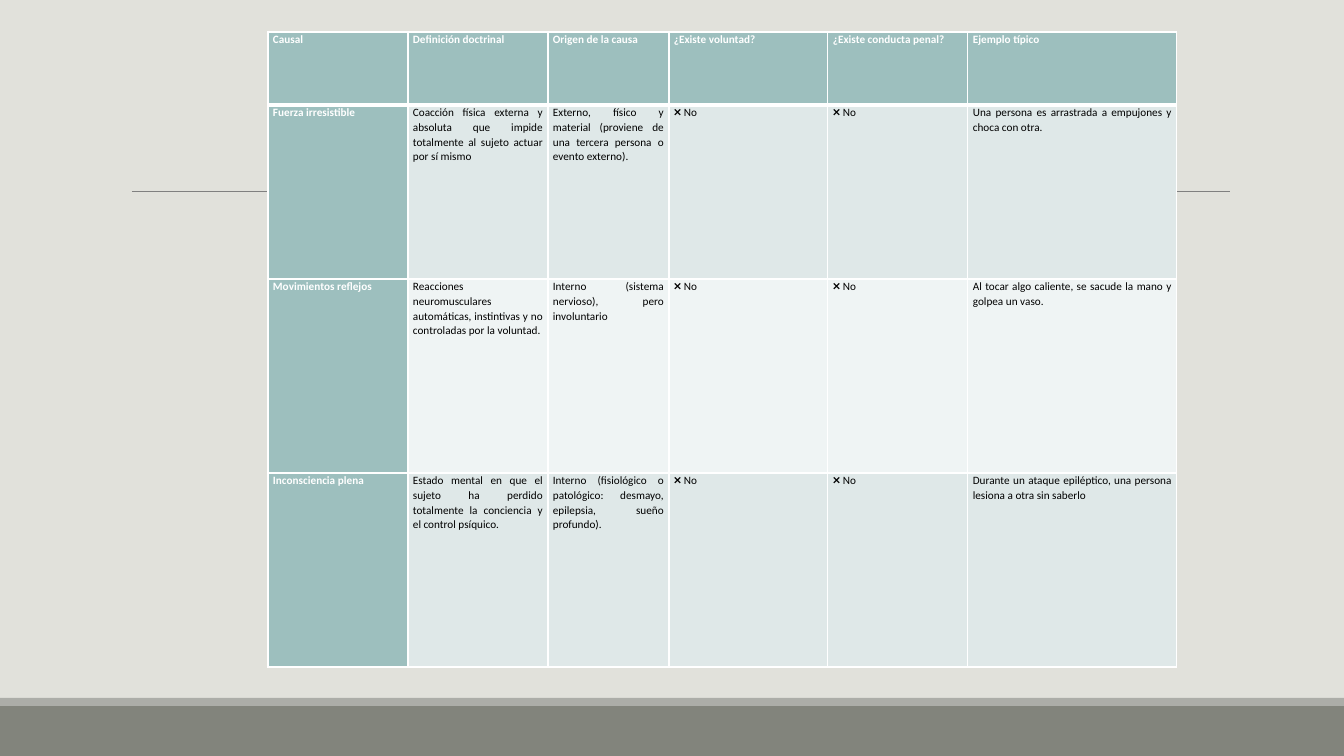
from pptx import Presentation
from pptx.dml.color import RGBColor as RGB
from pptx.enum.shapes import MSO_CONNECTOR as LINK, MSO_SHAPE as SHAPE
from pptx.enum.text import PP_ALIGN as ALIGN
from pptx.oxml.ns import qn
from pptx.util import Pt
from lxml.etree import SubElement as Sub, Element

PX = 9144000 / 1008
WIDE, HIGH = 1344, 756
COLORS = {
    "page": "E1E1DB", "band": "82847C", "strip": "ACADA8", "rule": "808080",
    "head": "9DBFBE", "odd": "DFE8E8", "even": "EFF4F4",
    "white": "FFFFFF", "black": "000000",
}
COLS = [140, 140, 121, 159, 140, 209]
ROWS = [73, 174, 194, 194]
NO = "❌ No"
CAUSES = [
    ["Causal", "Definición doctrinal", "Origen de la causa", "¿Existe voluntad?",
     "¿Existe conducta penal?", "Ejemplo típico"],
    ["Fuerza irresistible",
     "Coacción física externa y absoluta que impide totalmente al sujeto actuar por sí mismo",
     "Externo, físico y material (proviene de una tercera persona o evento externo).",
     NO, NO, "Una persona es arrastrada a empujones y choca con otra."],
    ["Movimientos reflejos",
     "Reacciones neuromusculares automáticas, instintivas y no controladas por la voluntad.",
     "Interno (sistema nervioso), pero involuntario",
     NO, NO, "Al tocar algo caliente, se sacude la mano y golpea un vaso."],
    ["Inconsciencia plena",
     "Estado mental en que el sujeto ha perdido totalmente la conciencia y el control psíquico.",
     "Interno (fisiológico o patológico: desmayo, epilepsia, sueño profundo).",
     NO, NO, "Durante un ataque epiléptico, una persona lesiona a otra sin saberlo"],
]


def px(n):
    return round(n * PX)


def color(name):
    return RGB.from_string(COLORS[name])


def add_bar(slide, x, y, w, h, fill):
    bar = slide.shapes.add_shape(SHAPE.RECTANGLE, px(x), px(y), px(w), px(h))
    bar.shadow.inherit = False
    bar.fill.solid()
    bar.fill.fore_color.rgb = color(fill)
    bar.line.fill.background()


def add_rule(slide, x, y, w):
    rule = slide.shapes.add_connector(LINK.STRAIGHT, px(x), px(y), px(x + w), px(y))
    rule.line.color.rgb = color("rule")
    rule.line.width = Pt(0.5)
    Sub(rule._element.spPr, qn("a:effectLst"))


def add_frame(slide):
    """Page colour, footer bands and title rule."""
    back = slide.background.fill
    back.solid()
    back.fore_color.rgb = color("page")
    add_bar(slide, 0, 706, WIDE, HIGH - 706, "band")
    add_bar(slide, 0, 698, WIDE, 8, "strip")
    add_rule(slide, 132, 191, 1098)


def set_edges(cell, widths):
    """Draw white borders; widths holds points for left, right, top, bottom."""
    props = cell._tc.get_or_add_tcPr()
    for i, (side, width) in enumerate(zip("LRTB", widths)):
        edge = Element(qn(f"a:ln{side}"), w=str(Pt(width)))
        fill = Sub(edge, qn("a:solidFill"))
        Sub(fill, qn("a:srgbClr"), val=COLORS["white"])
        props.insert(i, edge)


def fill_cell(cell, text, row, col):
    title = row == 0 or col == 0
    cell.margin_left = cell.margin_right = px(5)
    cell.margin_top = cell.margin_bottom = 0
    cell.fill.solid()
    cell.fill.fore_color.rgb = color("head" if title else "odd" if row % 2 else "even")
    set_edges(cell, [1, 1, 3 if row == 1 else 1, 3 if row == 0 else 1])
    cell.text = text
    para = cell.text_frame.paragraphs[0]
    para.alignment = ALIGN.JUSTIFY
    para.line_spacing = 1.07
    para.space_after = Pt(8)
    para.font.name = "Calibri"
    para.font.size = Pt(8)
    para.font.bold = title
    para.font.color.rgb = color("white" if title else "black")


def add_causes(slide, x, y):
    frame = slide.shapes.add_table(
        len(ROWS), len(COLS), px(x), px(y), px(sum(COLS)), px(sum(ROWS)))
    table = frame.table
    for col, w in zip(table.columns, COLS):
        col.width = px(w)
    for row, h in zip(table.rows, ROWS):
        row.height = px(h)
    for r, texts in enumerate(CAUSES):
        for c, text in enumerate(texts):
            fill_cell(table.cell(r, c), text, r, c)


def main():
    deck = Presentation()
    deck.slide_width, deck.slide_height = px(WIDE), px(HIGH)
    slide = deck.slides.add_slide(deck.slide_layouts[6])
    add_frame(slide)
    add_causes(slide, 268, 32)
    deck.save("out.pptx")


if __name__ == "__main__":
    main()
